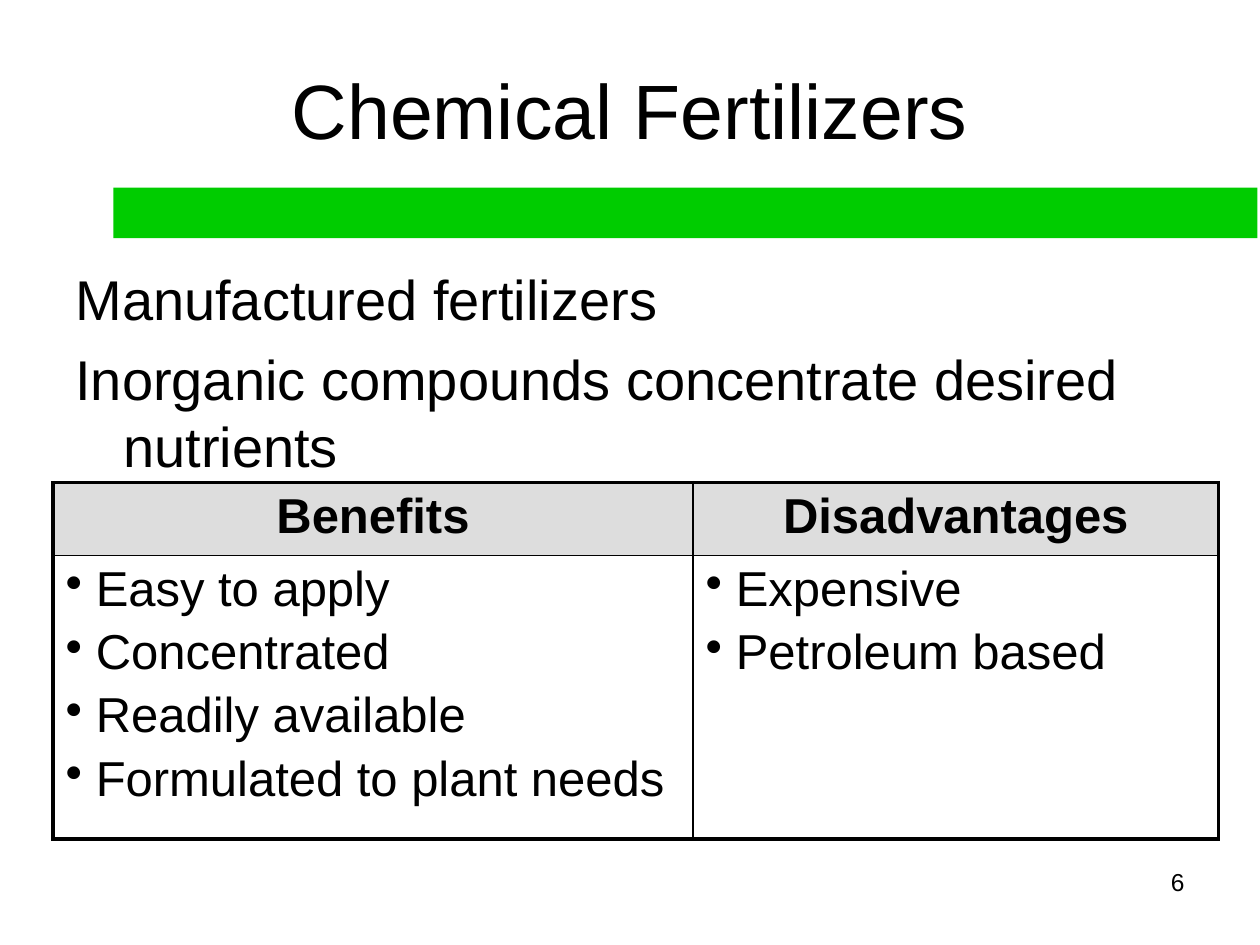
import pptx
import pptx.util
import pptx.dml.color
import pptx.enum.shapes
import pptx.enum.text
import pptx.oxml.ns
from lxml import etree

Inches = pptx.util.Inches
Pt = pptx.util.Pt
ALIGN = pptx.enum.text.PP_ALIGN
BLACK = "000000"


def color(code):
    return pptx.dml.color.RGBColor.from_string(code)


def sub(node, tag, **attrs):
    return etree.SubElement(node, pptx.oxml.ns.qn(tag), attrs)


def write(frame, lines, size, align=ALIGN.LEFT, bold=False, gap=0, hang=0, mark=None):
    """Fill a text frame with one paragraph per line."""
    frame.word_wrap = True
    for i, line in enumerate(lines):
        para = frame.paragraphs[0] if i == 0 else frame.add_paragraph()
        para.text = line
        para.alignment = align
        if i:
            para.space_before = Pt(gap)
        props = para._p.get_or_add_pPr()
        if hang:
            props.set("marL", str(Inches(hang)))
            props.set("indent", str(-Inches(hang)))
        if mark:
            sub(props, "a:buChar", char=mark)
        font = para.font
        font.name, font.size, font.bold = "Arial", Pt(size), bold
        font.color.rgb = color(BLACK)


def add_text(slide, box, lines, size, **style):
    frame = slide.shapes.add_textbox(*map(Inches, box)).text_frame
    write(frame, lines, size, **style)
    return frame


def add_bar(slide, box, code):
    kind = pptx.enum.shapes.MSO_SHAPE.RECTANGLE
    bar = slide.shapes.add_shape(kind, *map(Inches, box))
    bar.shadow.inherit = False
    bar.fill.solid()
    bar.fill.fore_color.rgb = color(code)
    bar.line.fill.background()


def add_edge(cell, side, width):
    line = sub(cell._tc.get_or_add_tcPr(), "a:ln" + side, w=str(Pt(width)))
    sub(sub(line, "a:solidFill"), "a:srgbClr", val=BLACK)


def add_grid(slide, box, widths, heights, heads, lists):
    table = slide.shapes.add_table(2, len(heads), *map(Inches, box)).table
    for col, width in zip(table.columns, widths):
        col.width = Inches(width)
    for row, height in zip(table.rows, heights):
        row.height = Inches(height)
    last = len(heads) - 1
    for c, (head, items) in enumerate(zip(heads, lists)):
        top, body = table.cell(0, c), table.cell(1, c)
        # Thick outer frame, thin inner lines
        for r, cell in enumerate((top, body)):
            outer = {"L": c == 0, "R": c == last, "T": r == 0, "B": r == 1}
            for side, thick in outer.items():
                add_edge(cell, side, 2.25 if thick else 1)
        top.fill.solid()
        top.fill.fore_color.rgb = color("DDDDDD")
        body.fill.background()
        write(top.text_frame, [head], 28, align=ALIGN.CENTER, bold=True)
        write(body.text_frame, items, 28, gap=5, hang=0.24, mark="•")


def main():
    deck = pptx.Presentation()
    deck.slide_width, deck.slide_height = Inches(10), Inches(7.5)
    slide = deck.slides.add_slide(deck.slide_layouts[6])

    # Green bar, page number and title
    add_bar(slide, (0.9, 1.49, 9.08, 0.4), "00CC00")
    add_text(slide, (7.17, 6.83, 2.33, 0.52), ["6"], 14, align=ALIGN.RIGHT)
    title = add_text(slide, (0.5, 0.3, 9, 1.12), ["Chemical Fertilizers"], 44,
                     align=ALIGN.CENTER)
    title.vertical_anchor = pptx.enum.text.MSO_ANCHOR.MIDDLE

    # Body text
    intro = add_text(slide, (0.5, 2, 9, 4.7), [
        "Manufactured fertilizers",
        "Inorganic compounds concentrate desired nutrients",
    ], 32, gap=7, hang=0.38)
    intro.margin_top = Inches(0.1)

    # Comparison table
    add_grid(slide, (0.42, 3.83, 9.25, 2.83), (5.08, 4.17), (0.58, 2.25),
             ["Benefits", "Disadvantages"],
             [["Easy to apply", "Concentrated", "Readily available",
               "Formulated to plant needs"],
              ["Expensive", "Petroleum based"]])

    deck.save("out.pptx")


if __name__ == "__main__":
    main()
